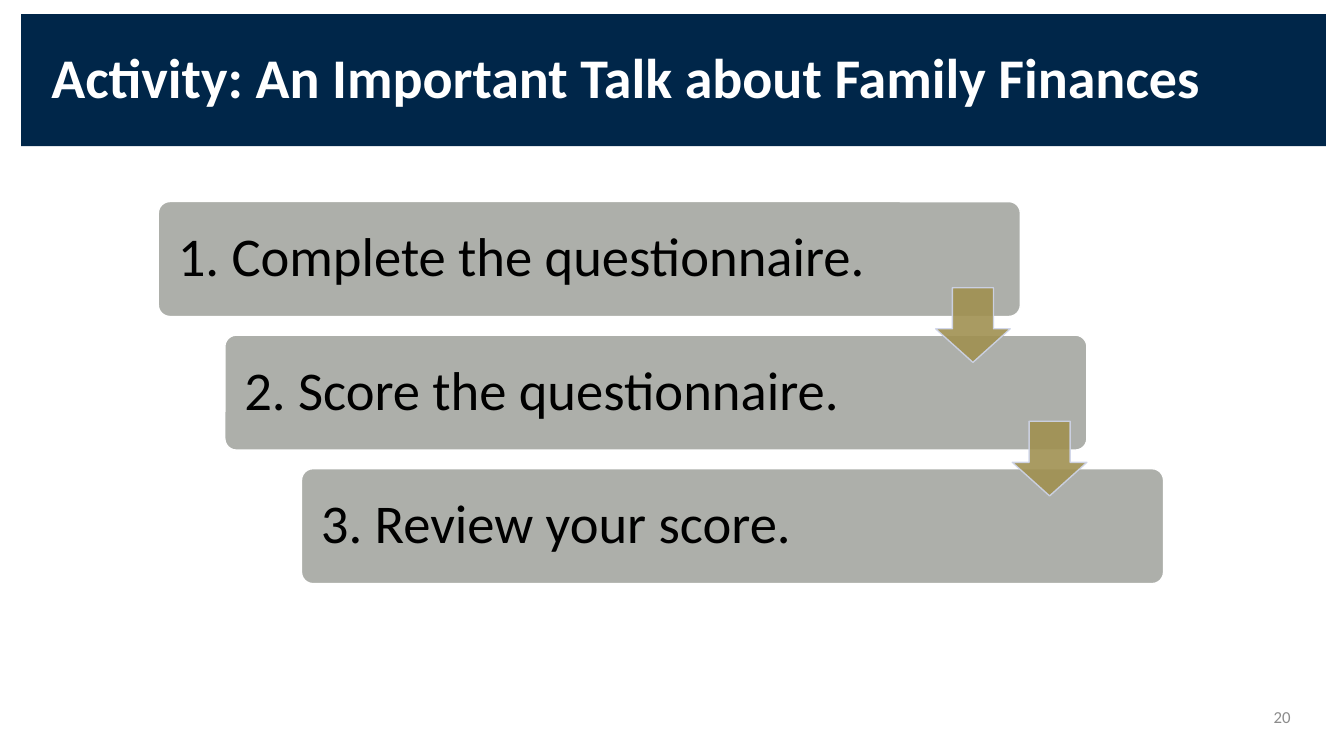
from lxml import etree
from pptx import Presentation
from pptx.dml.color import RGBColor
from pptx.enum import shapes, text
from pptx.oxml.ns import qn
from pptx.util import Inches, Pt

TITLE = "Activity: An Important Talk about Family Finances"
STEPS = [  # left edge in inches, wording
    (1.57, "1. Complete the questionnaire."),
    (2.23, "2. Score the questionnaire."),
    (2.99, "3. Review your score."),
]
PAGE = "20"

NAVY, GREY, GOLD, PALE = "002649", "ADAFAA", "A09151", "CFD5EA"
WHITE, BLACK, PAGE_GREY = "FFFFFF", "000000", "8C8C8C"

STEP_TOP, STEP_PITCH, STEP_W, STEP_H = 2, 1.325, 8.55, 1.14
ARROW_SIZE, ARROW_DX, ARROW_RISE = 0.74, 7.05, 0.47  # relative to the next step


def color(hex_string):
    return RGBColor.from_string(hex_string)


def write(sp, words, size, ink, bold=False, align=text.PP_ALIGN.LEFT,
          inset=0.1, spacing=None):
    tf = sp.text_frame
    tf.word_wrap = True
    tf.auto_size = text.MSO_AUTO_SIZE.NONE
    tf.vertical_anchor = text.MSO_ANCHOR.MIDDLE
    tf.margin_left = tf.margin_right = Inches(inset)
    tf.margin_top = tf.margin_bottom = Inches(0.05)
    p = tf.paragraphs[0]
    p.alignment, p.line_spacing = align, spacing
    r = p.add_run()
    r.text = words
    r.font.name, r.font.size, r.font.bold = "Calibri", Pt(size), bold
    r.font.color.rgb = color(ink)


def fill(sp, hex_string):
    sp.fill.solid()
    sp.fill.fore_color.rgb = color(hex_string)


def add_block(slide, kind, box, paint, edge, adjustments):
    sp = slide.shapes.add_shape(kind, *map(Inches, box))
    sp.shadow.inherit = False
    fill(sp, paint)
    sp.line.color.rgb = color(edge)
    sp.line.width = Pt(1)
    for i, value in enumerate(adjustments):
        sp.adjustments[i] = value
    return sp


def set_opacity(sp, percent):
    for c in sp._element.spPr.iter(qn("a:srgbClr")):
        etree.SubElement(c, qn("a:alpha"), val=str(percent * 1000))


prs = Presentation()
prs.slide_width, prs.slide_height = Inches(13.33), Inches(7.5)
slide = prs.slides.add_slide(prs.slide_layouts[5])

title = slide.shapes.title
title.left, title.top, title.width, title.height = map(
    Inches, (0.21, 0.14, 12.94, 1.31))
fill(title, NAVY)
write(title, TITLE, 40, WHITE, bold=True, inset=0.3, spacing=0.9)

tops = [STEP_TOP + i * STEP_PITCH for i in range(len(STEPS))]
for (left, words), top in zip(STEPS, tops):
    step = add_block(slide, shapes.MSO_SHAPE.ROUNDED_RECTANGLE,
                     (left, top, STEP_W, STEP_H), GREY, WHITE, [0.1])
    write(step, words, 39, BLACK, inset=0.16, spacing=0.9)

for (left, _), top in zip(STEPS[1:], tops[1:]):
    arrow = add_block(slide, shapes.MSO_SHAPE.DOWN_ARROW,
                      (left + ARROW_DX, top - ARROW_RISE, ARROW_SIZE, ARROW_SIZE),
                      GOLD, PALE, [0.45, 0.55])
    # Preset order is head length, then shaft width
    arrow.adjustments[0], arrow.adjustments[1] = 0.55, 0.45
    set_opacity(arrow, 90)

page = slide.shapes.add_textbox(*map(Inches, (9.78, 6.91, 3.12, 0.4)))
write(page, PAGE, 12, PAGE_GREY, align=text.PP_ALIGN.RIGHT)

prs.save("out.pptx")
